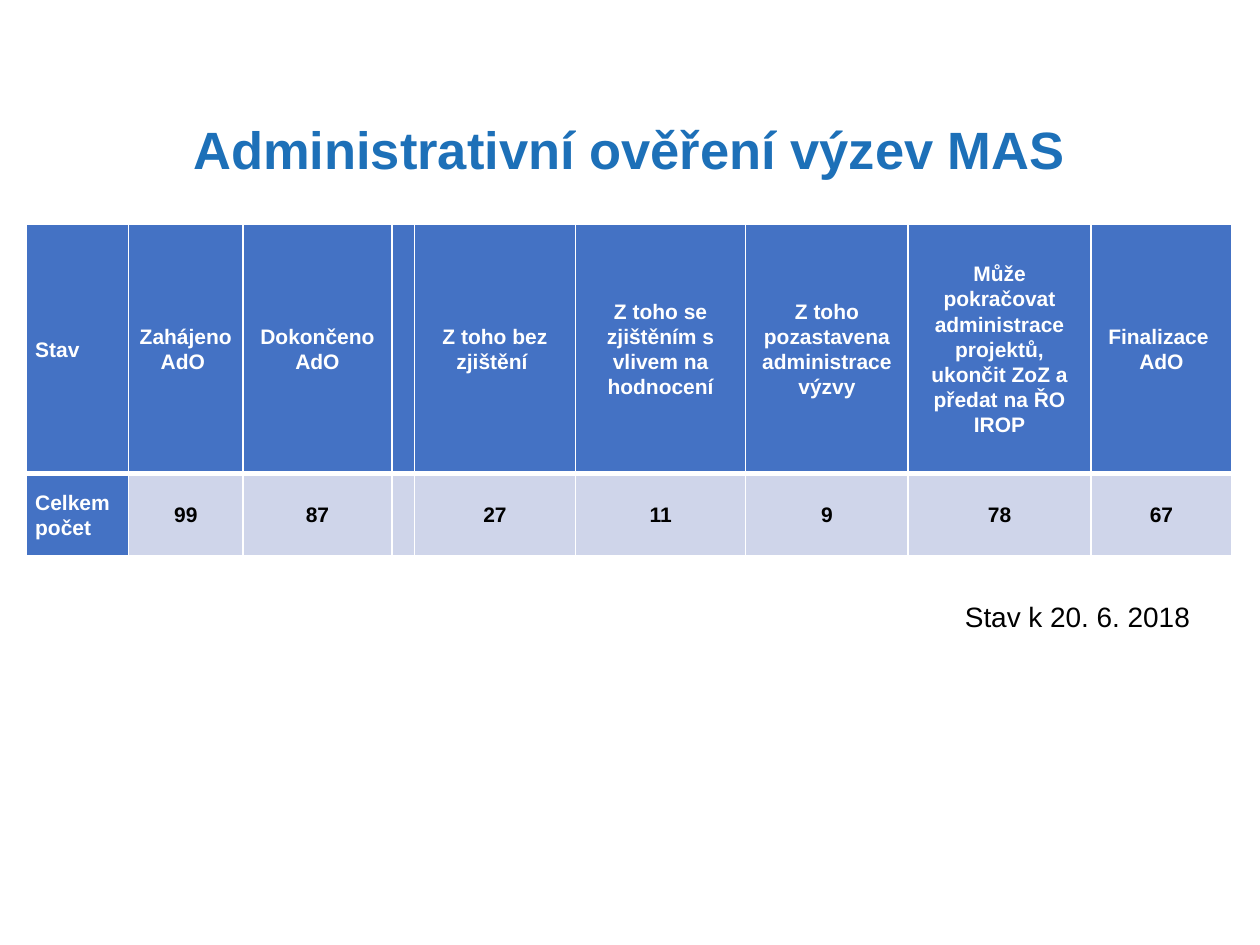
from lxml import etree
from pptx import Presentation
from pptx.dml.color import RGBColor
from pptx.enum.text import MSO_ANCHOR, PP_ALIGN
from pptx.oxml.ns import qn
from pptx.util import Inches, Pt

LEFT, CENTER = PP_ALIGN.LEFT, PP_ALIGN.CENTER
MIDDLE = MSO_ANCHOR.MIDDLE
COLORS = {"title": "1D70B8", "head": "4472C4", "body": "CFD5EA",
          "white": "FFFFFF", "black": "000000"}


def style(par, size, color, bold, align):
    par.alignment = align
    for run in par.runs:
        run.font.name = "Arial"
        run.font.size = Pt(size)
        run.font.bold = bold
        run.font.color.rgb = RGBColor.from_string(COLORS[color])


def border(cell, side, width):
    line = etree.SubElement(cell._tc.get_or_add_tcPr(), qn("a:ln" + side))
    line.set("w", str(Pt(width)))
    fill = etree.SubElement(line, qn("a:solidFill"))
    etree.SubElement(fill, qn("a:srgbClr")).set("val", COLORS["white"])


prs = Presentation()
prs.slide_width, prs.slide_height = Inches(10), Inches(7.5)
slide = prs.slides.add_slide(prs.slide_layouts[6])

labels = [
    ("Administrativní ověření výzev MAS", (0.7, 0.88, 8.59, 0.61),
     30, "title", True, CENTER),
    ("Stav k 20. 6. 2018", (7.56, 4.71, 2.21, 0.37),
     16, "black", False, LEFT),
]
for text, place, size, color, bold, align in labels:
    box = slide.shapes.add_textbox(*map(Inches, place))
    box.text_frame.word_wrap = True
    box.text_frame.text = text
    style(box.text_frame.paragraphs[0], size, color, bold, align)

rows = [
    ["Stav", "Zahájeno AdO ", "Dokončeno AdO", "", "Z toho bez zjištění ",
     "Z toho se zjištěním s vlivem na hodnocení",
     "Z toho pozastavena administrace výzvy",
     "Může pokračovat administrace projektů, ukončit ZoZ a předat na ŘO IROP",
     "Finalizace \vAdO"],
    ["Celkem počet", "99", "87", "", "27", "11", "9", "78", "67"],
]
widths = [0.81, 0.91, 1.18, 0.16, 1.28, 1.35, 1.29, 1.45, 1.12]
heights = [1.98, 0.65]
edges = [{"L": 1, "R": 1, "T": 1, "B": 3}, {"L": 1, "R": 1, "T": 3, "B": 1}]

table = slide.shapes.add_table(
    len(rows), len(widths), Inches(0.21), Inches(1.78),
    Inches(sum(widths)), Inches(sum(heights))).table
for col, width in zip(table.columns, widths):
    col.width = Inches(width)
for row, height in zip(table.rows, heights):
    row.height = Inches(height)

for r, texts in enumerate(rows):
    for c, text in enumerate(texts):
        cell = table.cell(r, c)
        head = r == 0 or c == 0
        cell.vertical_anchor = MIDDLE
        cell.margin_left = cell.margin_right = Inches(0.07)
        cell.margin_top = cell.margin_bottom = 0
        for side, width in edges[r].items():
            border(cell, side, width)
        cell.fill.solid()
        cell.fill.fore_color.rgb = RGBColor.from_string(
            COLORS["head" if head else "body"])
        par = cell.text_frame.paragraphs[0]
        par.text = text
        par.line_spacing = 1.07
        style(par, 12, "white" if head else "black", True,
              CENTER if c else LEFT)

prs.save("out.pptx")
